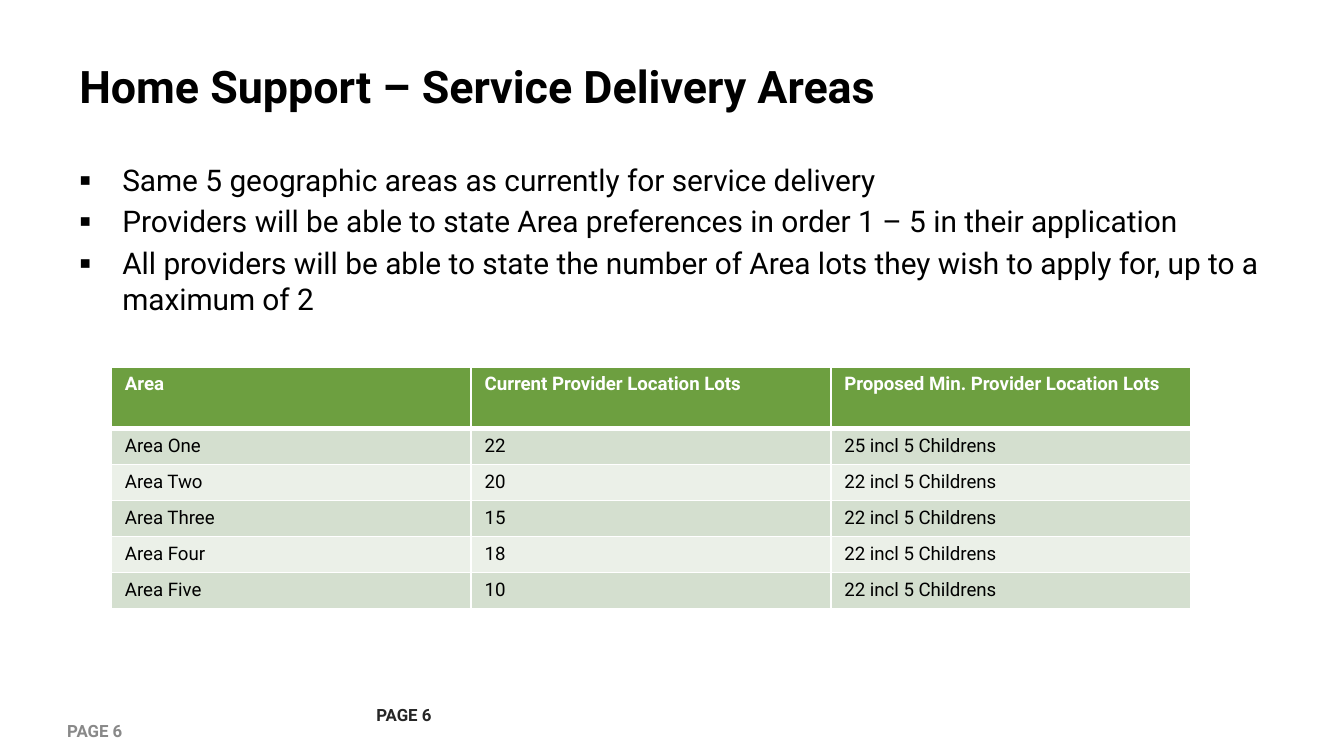
from dataclasses import dataclass

from lxml import etree
from pptx import Presentation
from pptx.dml.color import RGBColor
from pptx.enum.text import MSO_ANCHOR
from pptx.oxml.ns import qn
from pptx.util import Inches, Pt

TOP = MSO_ANCHOR.TOP
MIDDLE = MSO_ANCHOR.MIDDLE


@dataclass(frozen=True)
class Theme:
    """Colours and type sizes of the slide."""
    font: str = "Roboto"
    black: str = "000000"
    white: str = "FFFFFF"
    dark: str = "262626"
    gray: str = "898989"
    green: str = "6D9F40"
    bands: tuple = ("D4DFCF", "EBF0E8")
    title: int = 24
    body: int = 16
    cell: int = 10
    foot: int = 9


THEME = Theme()


def write(para, text, size=THEME.body, color=THEME.black, bold=False):
    """Put formatted text into a paragraph."""
    run = para.add_run()
    run.text = text
    font = run.font
    font.name = THEME.font
    font.size = Pt(size)
    font.bold = bold
    font.color.rgb = RGBColor.from_string(color)


class Deck:
    """Holds the theme and the current slide."""

    def __init__(self, theme, wide, ratio):
        """Start a deck with one blank slide."""
        self.theme = theme
        self.file = Presentation()
        self.file.slide_width = Inches(wide)
        self.file.slide_height = Inches(wide / ratio)
        self.slide = self.file.slides.add_slide(self.file.slide_layouts[6])

    def frame(self, area, anchor):
        """Add an empty wrapping text box and return its frame."""
        box = self.slide.shapes.add_textbox(*map(Inches, area))
        frame = box.text_frame
        frame.word_wrap = True
        frame.vertical_anchor = anchor
        frame.margin_left = frame.margin_right = Inches(0.09)
        frame.margin_top = frame.margin_bottom = Inches(0.04)
        return frame

    def label(self, area, text, **style):
        """Add one line of text, centred in height."""
        write(self.frame(area, MIDDLE).paragraphs[0], text, **style)

    def bullets(self, area, items, indent=0.32, gap=3.2):
        """Add a list with square bullets."""
        frame = self.frame(area, TOP)
        for i, item in enumerate(items):
            para = frame.add_paragraph() if i else frame.paragraphs[0]
            props = para._p.get_or_add_pPr()
            props.set("marL", str(Inches(indent)))
            props.set("indent", str(-Inches(indent)))
            etree.SubElement(props, qn("a:buFont"), typeface=self.theme.font)
            etree.SubElement(props, qn("a:buChar"), char="▪")
            para.space_before = Pt(gap if i else 0)
            write(para, item)

    def border(self, cell, head):
        """Draw the white borders of a cell, thicker below the header."""
        props = cell._tc.get_or_add_tcPr()
        for side in "LRTB":
            width = Pt(3 if head and side == "B" else 1)
            line = etree.SubElement(props, qn(f"a:ln{side}"), w=str(width))
            fill = etree.SubElement(line, qn("a:solidFill"))
            etree.SubElement(fill, qn("a:srgbClr"), val=self.theme.white)

    def table(self, area, rows, head):
        """Add a banded table with equal columns and a taller header."""
        theme = self.theme
        shape = self.slide.shapes.add_table(
            len(rows), len(rows[0]), *map(Inches, area))
        table = shape.table
        high = (area[3] - head) / (len(rows) - 1)
        for r, row in enumerate(rows):
            top = r == 0
            table.rows[r].height = Inches(head if top else high)
            fill = theme.green if top else theme.bands[(r - 1) % 2]
            color = theme.white if top else theme.black
            for c, text in enumerate(row):
                cell = table.cell(r, c)
                self.border(cell, top)
                cell.fill.solid()
                cell.fill.fore_color.rgb = RGBColor.from_string(fill)
                write(cell.text_frame.paragraphs[0], text,
                      size=theme.cell, color=color, bold=top)


def main():
    """Build and save the slide."""
    deck = Deck(THEME, 10, 16 / 9)
    page = "PAGE 6"
    deck.label((2.71, 5.17, 0.87, 0.3), page,
               size=THEME.foot, color=THEME.dark, bold=True)
    deck.label((0.5, 0.23, 9, 0.81), "Home Support – Service Delivery Areas",
               size=THEME.title, bold=True)
    deck.bullets((0.5, 1.16, 9, 3.71), (
        "Same 5 geographic areas as currently for service delivery",
        "Providers will be able to state Area preferences in order 1 – 5 "
        "in their application",
        "All providers will be able to state the number of Area lots they "
        "wish to apply for, up to a maximum of 2",
    ))
    deck.label((0.41, 5.29, 2.33, 0.3), page,
               size=THEME.foot, color=THEME.gray, bold=True)
    deck.table((0.83, 2.73, 8.03, 1.8), (
        ("Area", "Current Provider Location Lots",
         "Proposed Min. Provider Location Lots"),
        ("Area One", "22", "25 incl 5 Childrens"),
        ("Area Two", "20", "22 incl 5 Childrens"),
        ("Area Three", "15", "22 incl 5 Childrens"),
        ("Area Four", "18", "22 incl 5 Childrens"),
        ("Area Five", "10", "22 incl 5 Childrens"),
    ), head=0.46)
    deck.file.save("out.pptx")


if __name__ == "__main__":
    main()
